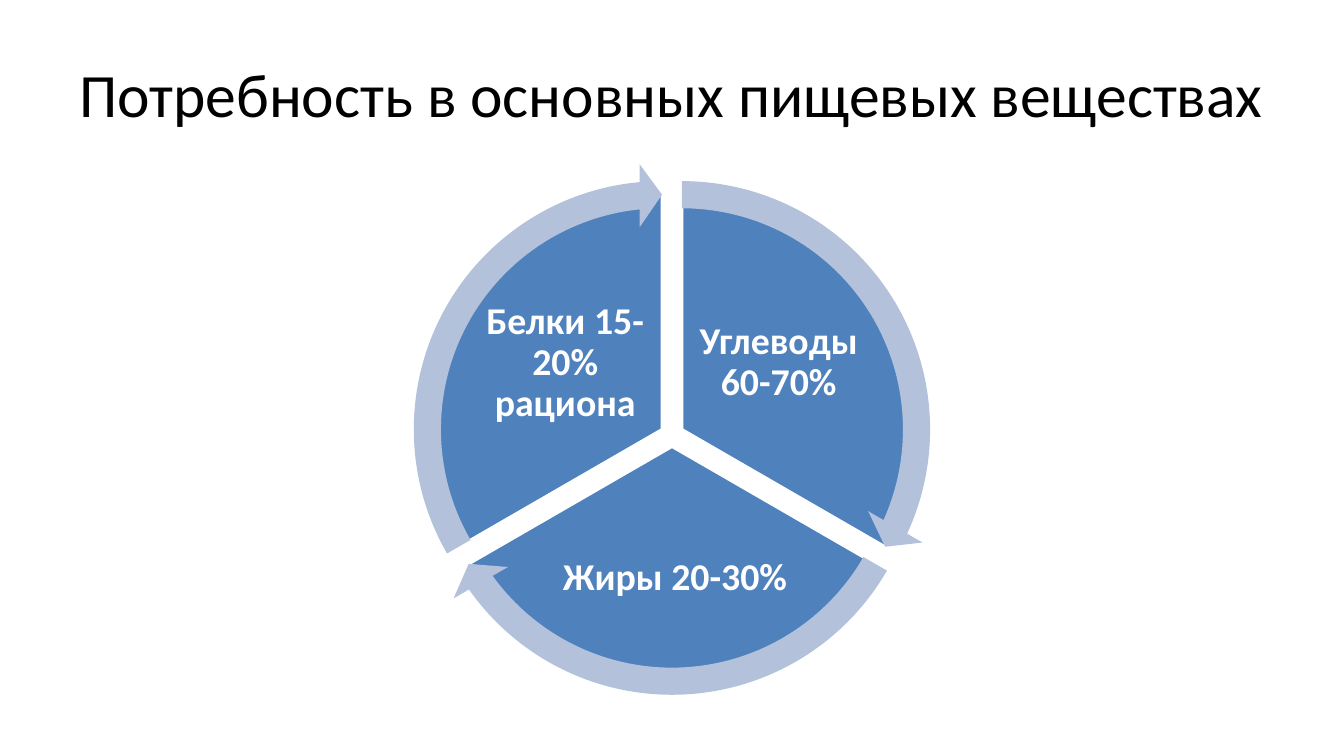
from math import cos, radians, sin

from pptx import Presentation
from pptx.dml.color import RGBColor
from pptx.enum.shapes import MSO_SHAPE
from pptx.enum.text import MSO_ANCHOR, PP_ALIGN
from pptx.util import Cm, Pt

PIE, ARROW = MSO_SHAPE.PIE, MSO_SHAPE.CIRCULAR_ARROW
MIDDLE, CENTER = MSO_ANCHOR.MIDDLE, PP_ALIGN.CENTER

BLUE, PALE, WHITE, BLACK = "4F81BD", "B3C1DB", "FFFFFF", "000000"
TITLE_ONLY = 5
UNITS_PER_DEGREE = 0.6  # adjustment value of one degree
HEAD_ANGLE = 3.275      # arrowhead length as an adjustment value

# Text, start and end angle, label centre from wheel centre, label size (cm)
NUTRIENTS = [
    ("Углеводы 60-70%", 270, 30, (2.69, -1.82), (4.27, 3.56)),
    ("Жиры 20-30%", 30, 150, (0.08, 3.6), (6.4, 3.12)),
    ("Белки 15-20% рациона", 150, 270, (-2.69, -1.82), (4.27, 3.56)),
]


def rgb(color):
    return RGBColor.from_string(color)


def write(tf, text, size=27, color=WHITE, bold=False, spacing=None):
    tf.word_wrap = True
    tf.vertical_anchor = MIDDLE
    p = tf.paragraphs[0]
    p.alignment = CENTER
    p.line_spacing = spacing
    r = p.add_run()
    r.text = text
    r.font.name = "Calibri"
    r.font.size = Pt(size)
    r.font.bold = bold
    r.font.color.rgb = rgb(color)


def add_round(s, kind, cx, cy, size, fill, adjustments, line=None):
    """Place a square preset shape around its centre."""
    sp = s.shapes.add_shape(kind, Cm(cx - size / 2), Cm(cy - size / 2),
                            Cm(size), Cm(size))
    sp.shadow.inherit = False
    sp.fill.solid()
    sp.fill.fore_color.rgb = rgb(fill)
    if line:
        sp.line.color.rgb = rgb(line)
        sp.line.width = Pt(2)
    else:
        sp.line.fill.background()
    for i, value in enumerate(adjustments):
        sp.adjustments[i] = value


def add_label(s, text, cx, cy, width, height):
    tf = s.shapes.add_textbox(Cm(cx - width / 2), Cm(cy - height / 2),
                              Cm(width), Cm(height)).text_frame
    tf.margin_left = tf.margin_right = Cm(0.1)
    tf.margin_top = tf.margin_bottom = Cm(0.1)
    write(tf, text, bold=True, spacing=0.9)


def add_title(s, left, top, width, height, text):
    sp = s.shapes.title
    sp.left, sp.top = Cm(left), Cm(top)
    sp.width, sp.height = Cm(width), Cm(height)
    write(sp.text_frame, text, size=44, color=BLACK)


def add_wheel(s, left, top, size):
    """Three sectors pushed out from the centre, each with an arrow."""
    cx, cy = left + size / 2, top + size / 2
    pie_size, gap = size * 0.89, size * 0.0215
    arrows = []

    # Sectors and labels
    for text, start, end, (dx, dy), label_size in NUTRIENTS:
        middle = radians(end - 60)
        x, y = cx + gap * cos(middle), cy + gap * sin(middle)
        first, last = start * UNITS_PER_DEGREE, end * UNITS_PER_DEGREE
        add_round(s, PIE, x, y, pie_size, BLUE, (first, last), line=WHITE)
        add_label(s, text, cx + dx, cy + dy, *label_size)
        arrows.append((x, y, first, last))

    # Arrows lie over all sectors
    for x, y, first, last in arrows:
        add_round(s, ARROW, x, y, size, PALE,
                  (0.051, HEAD_ANGLE, last - HEAD_ANGLE, first, 0.059))


def main():
    prs = Presentation()
    prs.slide_width, prs.slide_height = Cm(33.87), Cm(19.05)
    s = prs.slides.add_slide(prs.slide_layouts[TITLE_ONLY])
    add_title(s, 1.69, 0.76, 30.48, 3.18,
              "Потребность в основных пищевых веществах")
    add_wheel(s, 10.23, 4.26, 13.41)
    prs.save("out.pptx")


if __name__ == "__main__":
    main()
